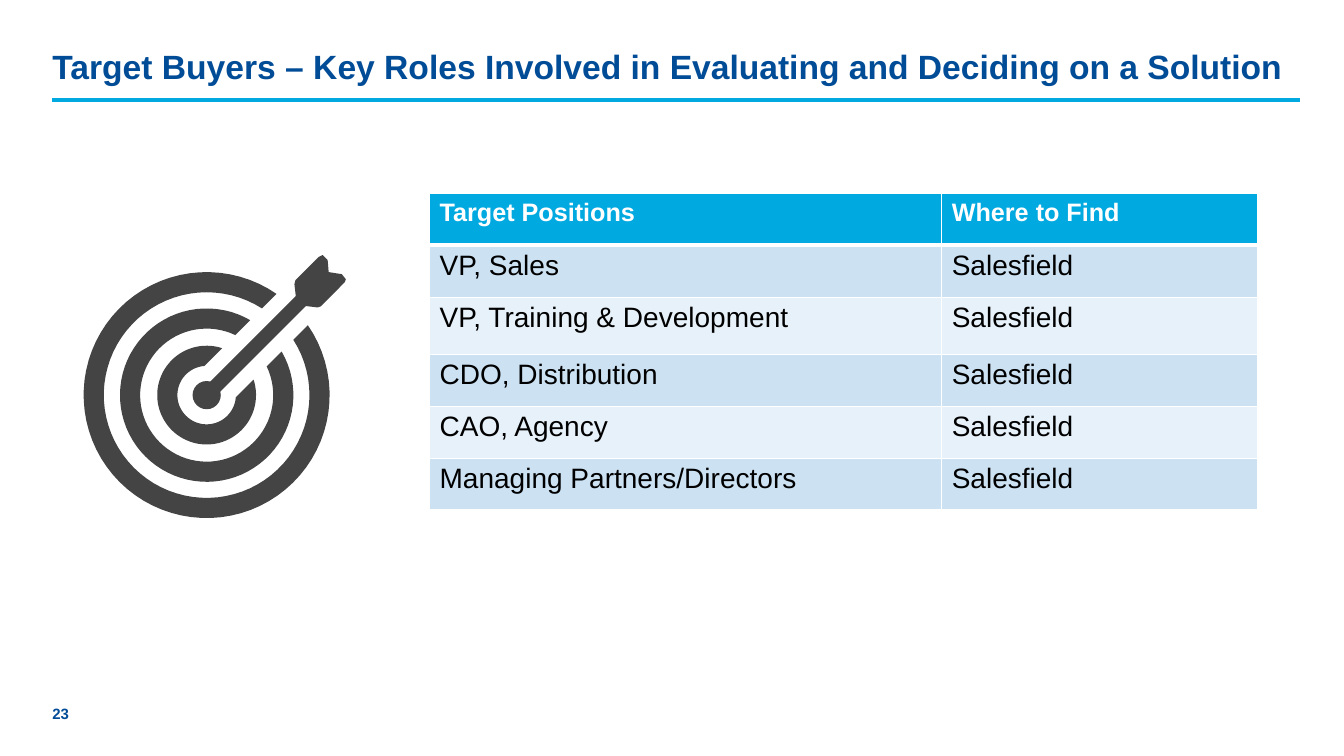
import math

from lxml import etree
from pptx import Presentation
from pptx import util as u
from pptx.dml.color import RGBColor
from pptx.enum import shapes, text
from pptx.oxml.ns import qn

NAVY, CYAN, WHITE, BLACK, CHARCOAL = "004C97", "00A9E0", "FFFFFF", "000000", "444444"
BANDS = ("CCE2F3", "E7F1F9")
POSITIONS = (
    "VP, Sales",
    "VP, Training & Development",
    "CDO, Distribution",
    "CAO, Agency",
    "Managing Partners/Directors",
)
SOURCE = "Salesfield"
RINGS = ((1.22, 1.02), (0.86, 0.66), (0.49, 0.29))
HALF_GAP = 0.22
FLETCHING = (
    (0.28, 0), (0.33, 0.05), (0.34, 0.17), (0.47, 0.19), (0.51, 0.24),
    (0.5, 0.27), (0.26, 0.51), (0.23, 0.52), (0.06, 0.5), (0.02, 0.46),
    (0, 0.29), (0.01, 0.25), (0.24, 0.02),
)


def color(value):
    """Turn a hex string into a colour."""
    return RGBColor.from_string(value)


def write(frame, words, size, tint, bold=False):
    """Put one run of text into a frame and return its paragraph."""
    para = frame.paragraphs[0]
    para.alignment = text.PP_ALIGN.LEFT
    span = para.add_run()
    span.text = words
    span.font.name = "Arial"
    span.font.size = u.Pt(size)
    span.font.bold = bold
    span.font.color.rgb = color(tint)
    return para


def clear_margins(frame):
    """Remove the insets of a frame and anchor its text at the bottom."""
    frame.margin_left = frame.margin_right = frame.margin_top = frame.margin_bottom = 0
    frame.vertical_anchor = text.MSO_ANCHOR.BOTTOM


def add_heading(page, left, top, width, height):
    """Place the title and the rule below it."""
    title = page.shapes.title
    title.left, title.top = u.Inches(left), u.Inches(top)
    title.width, title.height = u.Inches(width), u.Inches(height)
    frame = title.text_frame
    clear_margins(frame)
    frame.auto_size = text.MSO_AUTO_SIZE.NONE
    frame.word_wrap = False
    words = "Target Buyers – Key Roles Involved in Evaluating and Deciding on a Solution"
    write(frame, words, 24, NAVY, True).line_spacing = 1.2
    level = u.Inches(top + height + 0.13)
    rule = page.shapes.add_connector(
        shapes.MSO_CONNECTOR.STRAIGHT, u.Inches(left), level, u.Inches(left + width), level
    )
    rule.line.color.rgb = color(CYAN)
    rule.line.width = u.Pt(2.75)
    etree.SubElement(rule._element.spPr, qn("a:effectLst"))


def add_page_number(page, left, top, width, height):
    """Place the page number."""
    box = page.shapes.add_textbox(
        u.Inches(left), u.Inches(top), u.Inches(width), u.Inches(height)
    )
    box.text_frame.word_wrap = True
    clear_margins(box.text_frame)
    write(box.text_frame, "23", 10.7, NAVY, True)


def set_borders(cell, widths):
    """Draw white borders on the left, right, top and bottom of a cell."""
    properties = cell._tc.get_or_add_tcPr()
    for side, width in zip("LRTB", widths):
        line = etree.SubElement(properties, qn(f"a:ln{side}"), w=str(u.Pt(width)))
        fill = etree.SubElement(line, qn("a:solidFill"))
        etree.SubElement(fill, qn("a:srgbClr"), val=WHITE)


def add_roles_table(page, left, top, width, height):
    """Place the table of positions and where to find them."""
    rows = [("Target Positions", "Where to Find")]
    rows += [(position, SOURCE) for position in POSITIONS]
    table = page.shapes.add_table(
        len(rows), 2, u.Inches(left), u.Inches(top), u.Inches(width), u.Inches(height)
    ).table
    table.horz_banding = False
    table.columns[0].width = u.Inches(5.08)
    table.columns[1].width = u.Inches(width - 5.08)
    tall = 0.57
    usual = (height - tall) / (len(rows) - 1)
    for index, row in enumerate(rows):
        table.rows[index].height = u.Inches(tall if index == 2 else usual)
        header = index == 0
        for column, words in enumerate(row):
            cell = table.cell(index, column)
            set_borders(cell, (1, 1, 1, 3 if header else 1))
            cell.fill.solid()
            cell.fill.fore_color.rgb = color(CYAN if header else BANDS[(index - 1) % 2])
            size, tint = (18, WHITE) if header else (20, BLACK)
            write(cell.text_frame, words, size, tint, header)


def paint(shape):
    """Give a shape the plain fill of the target."""
    shape.shadow.inherit = False
    shape.fill.solid()
    shape.fill.fore_color.rgb = color(CHARCOAL)
    shape.line.fill.background()


def add_outline(page, points):
    """Draw a filled polygon through points given in inches."""
    corners = [(u.Inches(x), u.Inches(y)) for x, y in points]
    builder = page.shapes.build_freeform(*corners[0])
    builder.add_line_segments(corners[1:], close=True)
    paint(builder.convert_to_shape())


def open_arc(x, y, radius, steps=72):
    """List the points of a circle that is open toward the upper right."""
    opening = math.asin(HALF_GAP / radius)
    sweep = 2 * (math.pi - opening)
    angles = [math.pi / 4 + opening + sweep * step / steps for step in range(steps + 1)]
    return [(x + radius * math.cos(a), y - radius * math.sin(a)) for a in angles]


def add_target(page, left, top, width, height):
    """Place the target in the lower left of the box and the arrow across it."""
    x, y = left + RINGS[0][0], top + height - RINGS[0][0]
    for outer, inner in RINGS:
        add_outline(page, open_arc(x, y, outer) + open_arc(x, y, inner)[::-1])
    hub = page.shapes.add_shape(
        shapes.MSO_SHAPE.OVAL,
        u.Inches(x - 0.14), u.Inches(y - 0.14), u.Inches(0.28), u.Inches(0.28),
    )
    paint(hub)
    reach, length, thickness = 0.55, 1.64, 0.14
    shaft = page.shapes.add_shape(
        shapes.MSO_SHAPE.ROUNDED_RECTANGLE,
        u.Inches(x + reach - length / 2), u.Inches(y - reach - thickness / 2),
        u.Inches(length), u.Inches(thickness),
    )
    shaft.adjustments[0] = 0.5
    shaft.rotation = -45
    paint(shaft)
    tail_left = left + width - 0.51
    add_outline(page, [(tail_left + dx, top + dy) for dx, dy in FLETCHING])


def main():
    """Build the slide and save it."""
    deck = Presentation()
    deck.slide_width, deck.slide_height = u.Inches(13.33), u.Inches(7.5)
    page = deck.slides.add_slide(deck.slide_layouts[5])
    add_page_number(page, 0.52, 6.81, 0.36, 0.36)
    add_heading(page, 0.52, 0.39, 12.37, 0.47)
    add_roles_table(page, 4.26, 1.92, 8.21, 3.14)
    add_target(page, 0.83, 2.53, 2.6, 2.61)
    deck.save("out.pptx")


if __name__ == "__main__":
    main()
